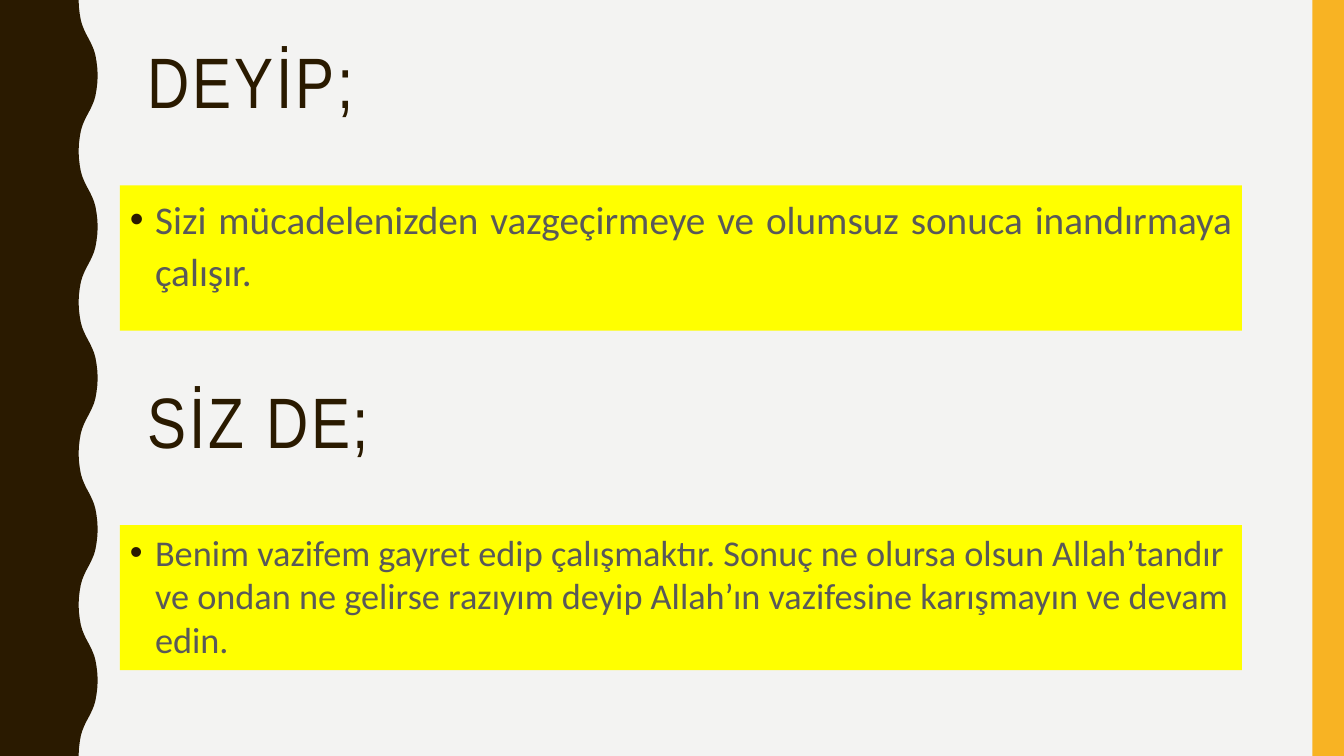
from pptx import Presentation
from pptx.dml.color import RGBColor as Rgb
from pptx.enum.shapes import MSO_SHAPE as Kind
from pptx.enum.text import MSO_ANCHOR as Anchor, PP_ALIGN as Align
from pptx.oxml import parse_xml
from pptx.oxml.ns import nsdecls
from pptx.util import Pt

HUES = {"back": "F3F3F2", "dark": "2A1A00", "gold": "F8B323",
        "mark": "FFFF00", "text": "595959"}
WIDE, HIGH = 960, 540
HEADS = [("DEYİP;", 30.2), ("SİZ DE;", 272.9)]
NOTES = [
    ("Sizi mücadelenizden vazgeçirmeye ve olumsuz sonuca inandırmaya çalışır.",
     132.5, 28, 1.1, Align.JUSTIFY),
    ("Benim vazifem gayret edip çalışmaktır. Sonuç ne olursa olsun Allah’tandır "
     "ve ondan ne gelirse razıyım deyip Allah’ın vazifesine karışmayın ve devam edin.",
     375.1, 25.9, 1.0, Align.LEFT),
]
CURVE = [(56.2, 0), (56.4, 5), (57, 10), (57.8, 14.5), (58.8, 18),
         (60, 21), (61.4, 24), (63, 27)]
MID, HALF = 63, 54


def paint(shape, hue):
    shape.shadow.inherit = False
    shape.fill.solid()
    shape.fill.fore_color.rgb = Rgb.from_string(HUES[hue])
    shape.line.fill.background()


def write(shape, text, font, size, hue, gap, align=Align.LEFT):
    frame = shape.text_frame
    frame.word_wrap = True
    frame.vertical_anchor = Anchor.TOP
    para = frame.paragraphs[0]
    para.text = text
    para.alignment = align
    para.line_spacing = gap
    para.font.name = font
    para.font.size = Pt(size)
    para.font.color.rgb = Rgb.from_string(HUES[hue])
    return para


def bullet(para):
    props = para._p.get_or_add_pPr()
    props.set("marL", str(Pt(18)))
    props.set("indent", str(-Pt(18)))
    font = props.find("{*}defRPr")
    for tag in (f'<a:buClr {nsdecls("a")}><a:srgbClr val="{HUES["dark"]}"/></a:buClr>',
                f'<a:buFont {nsdecls("a")} typeface="Arial"/>',
                f'<a:buChar {nsdecls("a")} char="•"/>'):
        font.addprevious(parse_xml(tag))


def wave():
    rise = CURVE + [(2 * MID - x, HALF - y) for x, y in CURVE[-2::-1]]
    cycle = rise + [(x, 2 * HALF - y) for x, y in rise[-2::-1]]
    return [(x, y + top) for top in range(0, HIGH, 2 * HALF) for x, y in cycle]


deck = Presentation()
deck.slide_width, deck.slide_height = Pt(WIDE), Pt(HIGH)
slide = deck.slides.add_slide(deck.slide_layouts[6])
slide.background.fill.solid()
slide.background.fill.fore_color.rgb = Rgb.from_string(HUES["back"])
shapes = slide.shapes

edge = shapes.build_freeform(0, 0)
edge.add_line_segments([(Pt(x), Pt(y)) for x, y in wave() + [(0, HIGH)]], close=True)
paint(edge.convert_to_shape(), "dark")

band = shapes.add_shape(Kind.RECTANGLE, Pt(937.5), 0, Pt(22.5), Pt(HIGH))
paint(band, "gold")

for text, top in HEADS:
    box = shapes.add_textbox(Pt(98.6), Pt(top), Pt(801.4), Pt(117.4))
    para = write(box, text, "Arial Narrow", 51, "dark", 0.9)
    para.runs[0]._r.get_or_add_rPr().set("spc", "200")

for text, top, size, gap, align in NOTES:
    box = shapes.add_shape(Kind.RECTANGLE, Pt(85.7), Pt(top), Pt(801.4), Pt(103.7))
    paint(box, "mark")
    para = write(box, text, "Calibri", size, "text", gap, align)
    para.space_before = Pt(7)
    bullet(para)

deck.save("out.pptx")
